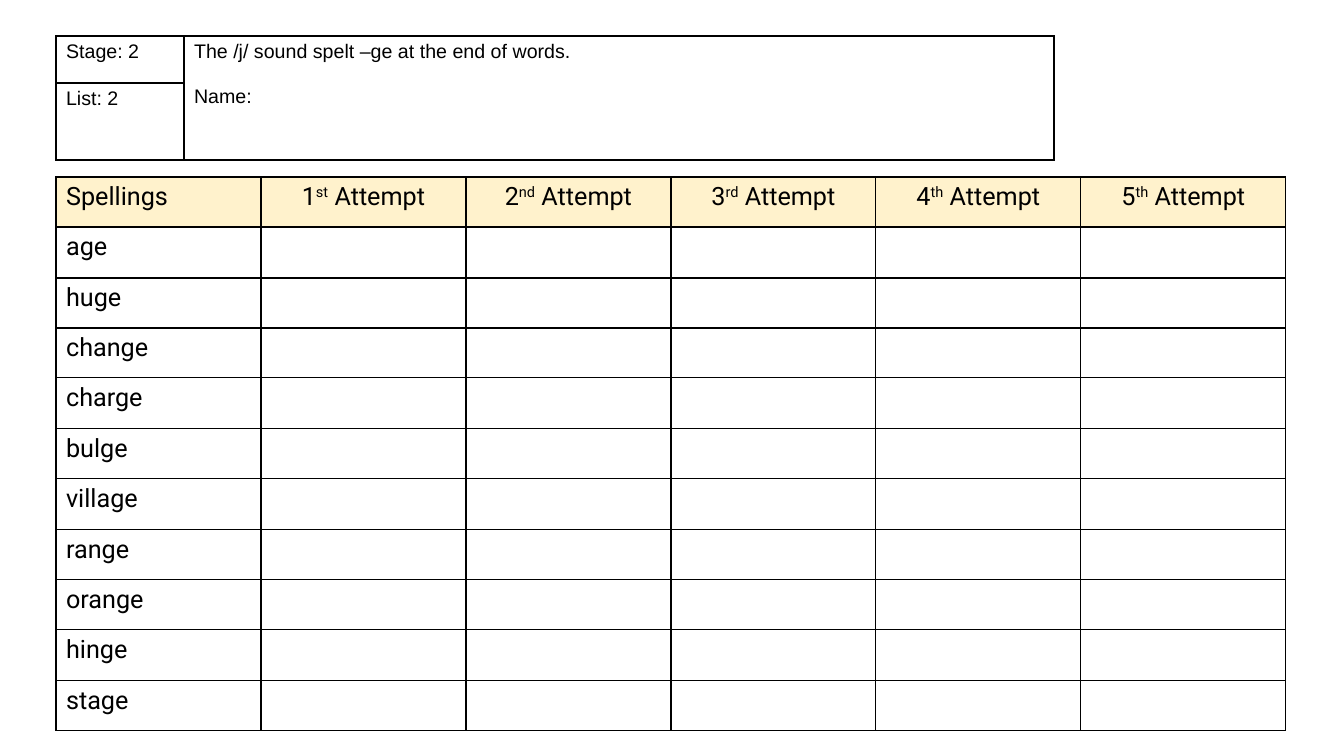
from dataclasses import dataclass

from lxml.etree import SubElement
from pptx import Presentation
from pptx.dml.color import RGBColor
from pptx.enum.text import PP_ALIGN
from pptx.oxml.ns import qn
from pptx.util import Pt

PX = 9071.43  # EMU in one px


@dataclass(frozen=True)
class Theme:
    ink: str = "000000"
    header_fill: str = "FFF2CC"
    border: int = 12700
    info_font: str = "Arial"
    info_size: int = 14
    list_font: str = "Roboto"
    list_size: int = 18


theme = Theme()


def add_grid(slide, left, top, widths, heights):
    """Add an unstyled table with a thin border round every cell."""
    box = [round(n * PX) for n in (left, top, sum(widths), sum(heights))]
    table = slide.shapes.add_table(len(heights), len(widths), *box).table
    table.first_row = table.horz_banding = False
    for column, width in zip(table.columns, widths):
        column.width = round(width * PX)
    for row, height in zip(table.rows, heights):
        row.height = round(height * PX)
    for cell in table.iter_cells():
        properties = cell._tc.get_or_add_tcPr()
        for side in ("a:lnL", "a:lnR", "a:lnT", "a:lnB"):
            line = SubElement(properties, qn(side), w=str(theme.border))
            solid = SubElement(line, qn("a:solidFill"))
            SubElement(solid, qn("a:srgbClr"), val=theme.ink)
        cell.fill.background()
    return table


def add_run(para, text, font, size):
    span = para.add_run()
    span.text = text
    span.font.name = font
    span.font.size = Pt(size)
    span.font.color.rgb = RGBColor.from_string(theme.ink)
    return span


deck = Presentation()
deck.slide_width = round(1344 * PX)
deck.slide_height = round(756 * PX)
page = deck.slides.add_slide(deck.slide_layouts[6])

# Spelling practice table
words = ["age", "huge", "change", "charge", "bulge",
         "village", "range", "orange", "hinge", "stage"]
ordinals = ["st", "nd", "rd", "th", "th"]
list_text = (theme.list_font, theme.list_size)
row_count = len(words) + 1
edges = [round(554 * i / row_count) for i in range(row_count + 1)]
row_heights = [end - start for start, end in zip(edges, edges[1:])]
spellings = add_grid(page, 56, 177, [205] * 6, row_heights)

for row, word in enumerate(["Spellings"] + words):
    add_run(spellings.cell(row, 0).text_frame.paragraphs[0], word, *list_text)

for attempt, suffix in enumerate(ordinals, start=1):
    para = spellings.cell(0, attempt).text_frame.paragraphs[0]
    para.alignment = PP_ALIGN.CENTER
    add_run(para, str(attempt), *list_text)
    raised = add_run(para, suffix, *list_text)
    raised.font._element.set("baseline", "30000")
    add_run(para, " Attempt", *list_text)

for column in range(6):
    fill = spellings.cell(0, column).fill
    fill.solid()
    fill.fore_color.rgb = RGBColor.from_string(theme.header_fill)

# Stage, list and name table
info_text = (theme.info_font, theme.info_size)
info = add_grid(page, 56, 36, [128, 870], [47, 77])
info.cell(0, 1).merge(info.cell(1, 1))
for row, label in enumerate(["Stage: 2", "List: 2"]):
    add_run(info.cell(row, 0).text_frame.paragraphs[0], label, *info_text)

frame = info.cell(0, 1).text_frame
add_run(frame.paragraphs[0], "The /j/ sound spelt –ge at the end of words.", *info_text)
name_para = frame.add_paragraph()
name_para.space_before = Pt(16)
add_run(name_para, "Name:", *info_text)

deck.save("out.pptx")
